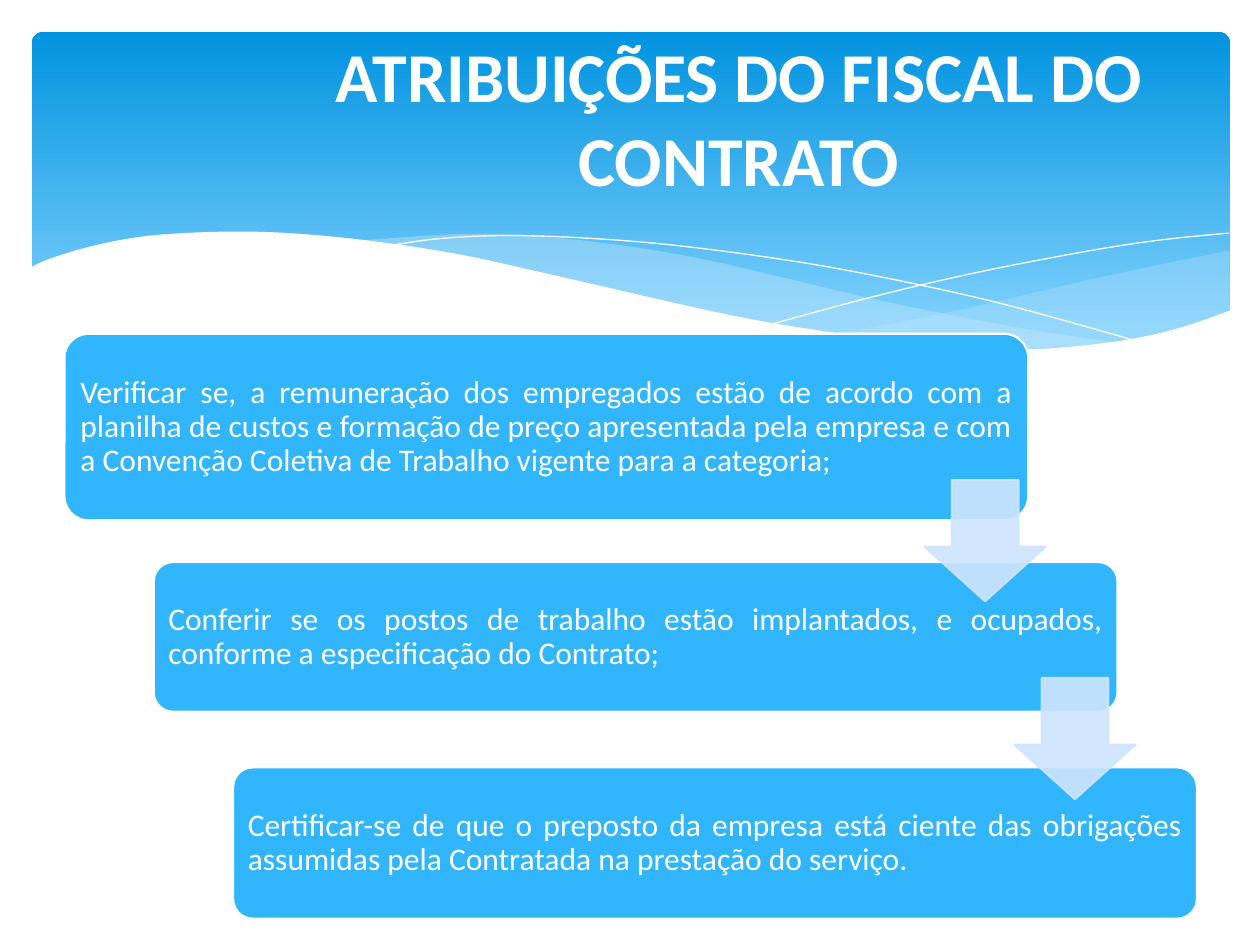
from lxml import etree
from pptx import Presentation
from pptx.dml.color import RGBColor
from pptx.enum.shapes import MSO_SHAPE
from pptx.enum.text import MSO_ANCHOR, PP_ALIGN
from pptx.oxml.ns import qn
from pptx.util import Cm, Pt

ROUNDED = MSO_SHAPE.ROUNDED_RECTANGLE
DOWN_ARROW = MSO_SHAPE.DOWN_ARROW
MIDDLE = MSO_ANCHOR.MIDDLE
CENTER = PP_ALIGN.CENTER
JUSTIFY = PP_ALIGN.JUSTIFY

COLORS = {
    "white": "FFFFFF",
    "banner_top": "0293E0",
    "banner_bottom": "83D3FE",
    "veil": "C6E7FC",
    "box": "31B6FD",
    "arrow": "CEE5FE",
}

RIGHT_VEIL = [
    [(24.79, 5.05), (23.75, 5.26), (21.87, 5.66), (19.79, 6.15), (17.93, 6.53), (16.79, 6.73)],
    [(16.79, 6.73), (18.24, 6.91), (20.4, 7.06), (22.15, 6.96), (23.57, 6.68), (24.79, 6.27)],
]
CENTER_VEIL = [
    [(22.68, 6.93), (20.5, 6.6), (17.93, 6.1), (15.98, 5.64), (14.1, 5.21),
     (12.42, 4.93), (10.67, 4.75), (9.17, 4.72), (7.26, 4.85)],
    [(7.26, 4.85), (9.19, 5.16), (11.4, 5.64), (13.46, 6.1), (15.7, 6.55),
     (17.65, 6.86), (19.63, 7.04), (21.29, 7.06), (22.68, 6.93)],
]
FALLING_LINE = [
    [(7.85, 4.95), (8.97, 4.8), (10.57, 4.75), (12.95, 4.88), (15.44, 5.18),
     (17.65, 5.56), (20.19, 6.12), (23.04, 6.91)],
]
RISING_LINE = [
    [(15.57, 6.53), (17.65, 5.97), (19.71, 5.49), (22, 5.05), (23.47, 4.83), (24.77, 4.7)],
]
WHITE_WAVE = [
    [(24.82, 6.25), (23.88, 6.58), (22.83, 6.83), (21.59, 6.99), (20.55, 7.04),
     (18.9, 6.96), (16.97, 6.73), (14.71, 6.35), (11.35, 5.59), (9.27, 5.13),
     (7.42, 4.85), (5.84, 4.7), (4.5, 4.67), (3.02, 4.75), (1.9, 4.95),
     (1.02, 5.21), (0.58, 5.41)],
    [(0.58, 5.41), (0.58, 8.36)],
    [(0.58, 8.36), (24.82, 8.36)],
]

DUTIES = [
    (1.3, 6.73, 3.76, "Verificar se, a remuneração dos empregados estão de acordo com a planilha "
     "de custos e formação de preço apresentada pela empresa e com a Convenção Coletiva de "
     "Trabalho vigente para a categoria;"),
    (3.1, 11.33, 3.02, "Conferir se os postos de trabalho estão implantados, e ocupados, "
     "conforme a especificação do Contrato;"),
    (4.7, 15.47, 3.05, "Certificar-se de que o preposto da empresa está ciente das obrigações "
     "assumidas pela Contratada na prestação do serviço."),
]
ARROWS = [(18.64, 9.68), (20.45, 13.67)]


def smooth(points, steps=5):
    padded = [points[0], *points, points[-1]]
    curve = [points[0]]
    for before, start, end, after in zip(padded, padded[1:], padded[2:], padded[3:]):
        for step in range(1, steps + 1):
            t = step / steps
            curve.append(tuple(
                (2 * b + (c - a) * t + (2 * a - 5 * b + 4 * c - d) * t ** 2
                 + (3 * b - a - 3 * c + d) * t ** 3) / 2
                for a, b, c, d in zip(before, start, end, after)
            ))
    return curve


class SlideBuilder:
    font_name = "Calibri"

    def __init__(self, slide):
        self.slide = slide

    def color(self, name):
        return RGBColor.from_string(COLORS[name])

    def paint(self, shape, fill=None, line=None, width=0, opacity=100):
        shape.shadow.inherit = False
        for format_fill, name in ((shape.fill, fill), (shape.line.fill, line)):
            if name:
                format_fill.solid()
                format_fill.fore_color.rgb = self.color(name)
            else:
                format_fill.background()
        if line:
            shape.line.width = Pt(width)
        if opacity < 100:
            for element in shape._element.spPr.iter(qn("a:srgbClr")):
                etree.SubElement(element, qn("a:alpha")).set("val", str(opacity * 1000))

    def preset(self, kind, left, top, width, height, adjustments):
        shape = self.slide.shapes.add_shape(kind, Cm(left), Cm(top), Cm(width), Cm(height))
        for index, value in enumerate(adjustments):
            shape.adjustments[index] = value
        return shape

    def banner(self):
        shape = self.preset(ROUNDED, 0.64, 0.64, 24.16, 6.86, [0.034])
        self.paint(shape)
        shape.fill.gradient()
        shape.fill.gradient_angle = 270
        stops = zip(shape.fill.gradient_stops, (0, 0.9), ("banner_top", "banner_bottom"))
        for stop, position, name in stops:
            stop.position = position
            stop.color.rgb = self.color(name)

    def wave(self, curves, closed=True, **style):
        points = [(Cm(x), Cm(y)) for curve in curves for x, y in smooth(curve)]
        builder = self.slide.shapes.build_freeform(*points[0])
        builder.add_line_segments(points[1:], close=closed)
        self.paint(builder.convert_to_shape(), **style)

    def fill_text(self, shape, text, size, align, margins, spacing=None, bold=False):
        frame = shape.text_frame
        frame.word_wrap = True
        frame.vertical_anchor = MIDDLE
        frame.margin_left = frame.margin_right = Cm(margins[0])
        frame.margin_top = frame.margin_bottom = Cm(margins[1])
        paragraph = frame.paragraphs[0]
        paragraph.alignment = align
        if spacing:
            paragraph.line_spacing = spacing
        run = paragraph.add_run()
        run.text = text
        run.font.name = self.font_name
        run.font.size = Pt(size)
        run.font.bold = bold
        run.font.color.rgb = self.color("white")

    def duty(self, left, top, height, text):
        shape = self.preset(ROUNDED, left, top, 19.43, height, [0.13])
        self.paint(shape, fill="box", line="white", width=1.25)
        self.fill_text(shape, text, 18, JUSTIFY, (0.18, 0.26), spacing=0.9)

    def arrow(self, left, top):
        shape = self.preset(DOWN_ARROW, left, top, 2.44, 2.44, [0.55, 0.45])
        self.paint(shape, fill="arrow", line="arrow", width=1.25, opacity=90)

    def title(self, text):
        shape = self.slide.shapes.add_textbox(Cm(5.08), Cm(0.76), Cm(19.63), Cm(3.18))
        self.fill_text(shape, text, 40, CENTER, (0.25, 0.13), bold=True)


def main():
    presentation = Presentation()
    presentation.slide_width = Cm(25.4)
    presentation.slide_height = Cm(19.05)
    builder = SlideBuilder(presentation.slides.add_slide(presentation.slide_layouts[6]))
    builder.banner()
    builder.wave(RIGHT_VEIL, fill="veil", opacity=29)
    builder.wave(CENTER_VEIL, fill="veil", opacity=40)
    for curve in (FALLING_LINE, RISING_LINE):
        builder.wave(curve, closed=False, line="white")
    builder.wave(WHITE_WAVE, fill="white")
    for duty in DUTIES:
        builder.duty(*duty)
    for position in ARROWS:
        builder.arrow(*position)
    builder.title("ATRIBUIÇÕES DO FISCAL DO CONTRATO")
    presentation.save("out.pptx")


if __name__ == "__main__":
    main()
